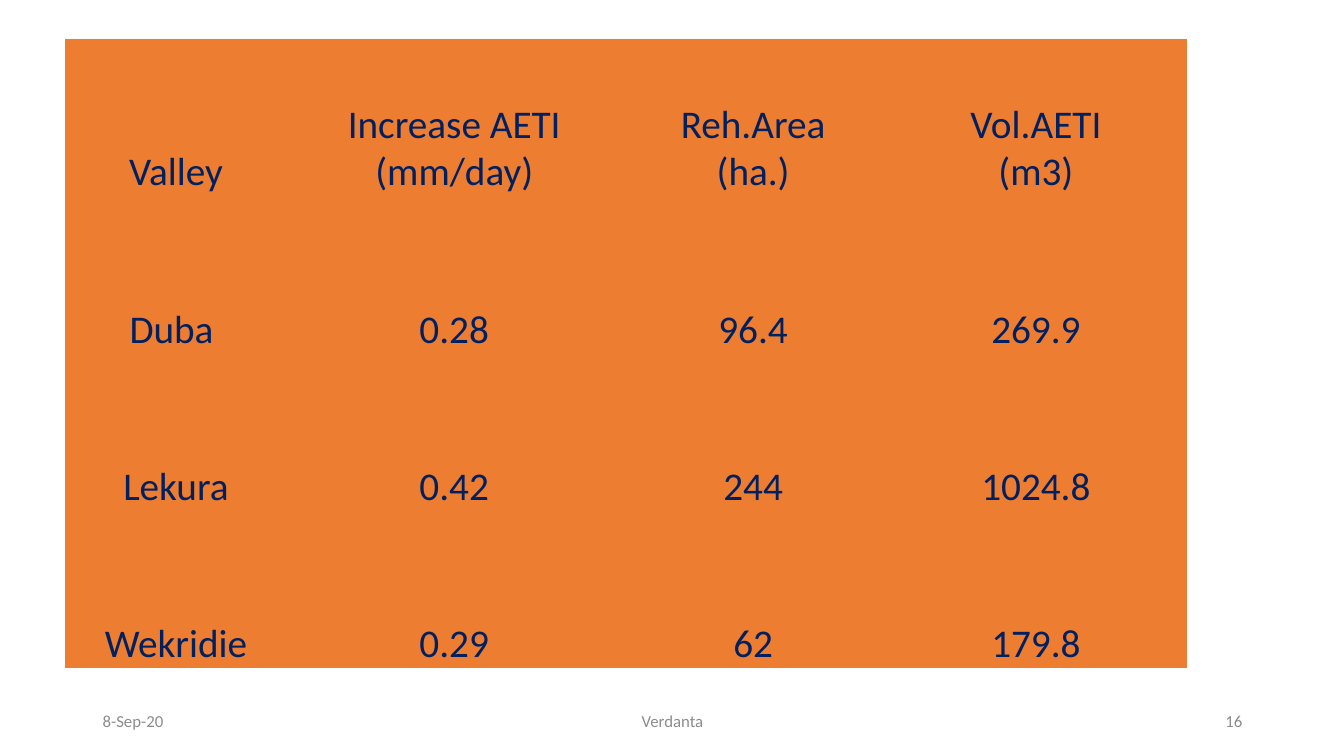
from dataclasses import dataclass

import pptx
import pptx.dml.color
import pptx.enum.text
import pptx.oxml.ns
import pptx.util

Inches = pptx.util.Inches
ALIGN = pptx.enum.text.PP_ALIGN
ANCHOR = pptx.enum.text.MSO_ANCHOR


@dataclass(frozen=True)
class Theme:
    font: str = "Calibri"
    table_fill: str = "ED7D31"
    table_text: str = "002060"
    footer_text: str = "8C8C8C"
    table_size: int = 28
    footer_size: int = 12


THEME = Theme()
PLAIN_TABLE_STYLE = "{2D5ABB26-0587-4C30-8999-92F81FD0307C}"

COLUMN_WIDTHS = [2.21, 3.31, 2.62, 2.99]
ROW_HEIGHT = 1.56
VALLEY_ROWS = [
    ["Valley", "Increase AETI\n(mm/day)", "Reh.Area\n(ha.)", "Vol.AETI\n(m3)"],
    ["Duba ", "0.28", "96.4", "269.9"],
    ["Lekura", "0.42", "244", "1024.8"],
    ["Wekridie", "0.29", "62", "179.8"],
]

FOOTER_TOP, FOOTER_HEIGHT = 6.95, 0.4
FOOTERS = [
    ("8-Sep-20", 0.92, 3, ALIGN.LEFT),
    ("Verdanta", 4.42, 4.5, ALIGN.CENTER),
    ("16", 9.42, 3, ALIGN.RIGHT),
]


def write_text(frame, text, size, color, alignment):
    """Write one paragraph for each line of text."""
    for index, line in enumerate(text.split("\n")):
        paragraph = frame.add_paragraph() if index else frame.paragraphs[0]
        paragraph.alignment = alignment
        run = paragraph.add_run()
        run.text = line
        run.font.name = THEME.font
        run.font.size = pptx.util.Pt(size)
        run.font.color.rgb = pptx.dml.color.RGBColor.from_string(color)


def fill_cell(cell, text):
    cell.fill.solid()
    cell.fill.fore_color.rgb = pptx.dml.color.RGBColor.from_string(THEME.table_fill)
    cell.margin_left = cell.margin_right = cell.margin_top = Inches(0.01)
    cell.margin_bottom = 0
    cell.vertical_anchor = ANCHOR.BOTTOM
    write_text(cell.text_frame, text, THEME.table_size, THEME.table_text, ALIGN.CENTER)


def add_valley_table(slide):
    frame = slide.shapes.add_table(
        len(VALLEY_ROWS), len(COLUMN_WIDTHS), Inches(0.64), Inches(0.39),
        Inches(sum(COLUMN_WIDTHS)), Inches(ROW_HEIGHT * len(VALLEY_ROWS)))
    for style in frame.element.iter(pptx.oxml.ns.qn("a:tableStyleId")):
        style.text = PLAIN_TABLE_STYLE
    table = frame.table
    table.first_row = table.horz_banding = False
    for column, width in zip(table.columns, COLUMN_WIDTHS):
        column.width = Inches(width)
    for row, texts in zip(table.rows, VALLEY_ROWS):
        row.height = Inches(ROW_HEIGHT)
        for cell, text in zip(row.cells, texts):
            fill_cell(cell, text)


def add_footer(slide, text, left, width, alignment):
    box = slide.shapes.add_textbox(
        Inches(left), Inches(FOOTER_TOP), Inches(width), Inches(FOOTER_HEIGHT))
    box.text_frame.word_wrap = True
    box.text_frame.vertical_anchor = ANCHOR.MIDDLE
    write_text(box.text_frame, text, THEME.footer_size, THEME.footer_text, alignment)


def main():
    presentation = pptx.Presentation()
    presentation.slide_width = Inches(13.33)
    presentation.slide_height = Inches(7.5)
    blank_layout = presentation.slide_layouts[6]
    slide = presentation.slides.add_slide(blank_layout)
    add_valley_table(slide)
    for footer in FOOTERS:
        add_footer(slide, *footer)
    presentation.save("out.pptx")


if __name__ == "__main__":
    main()
